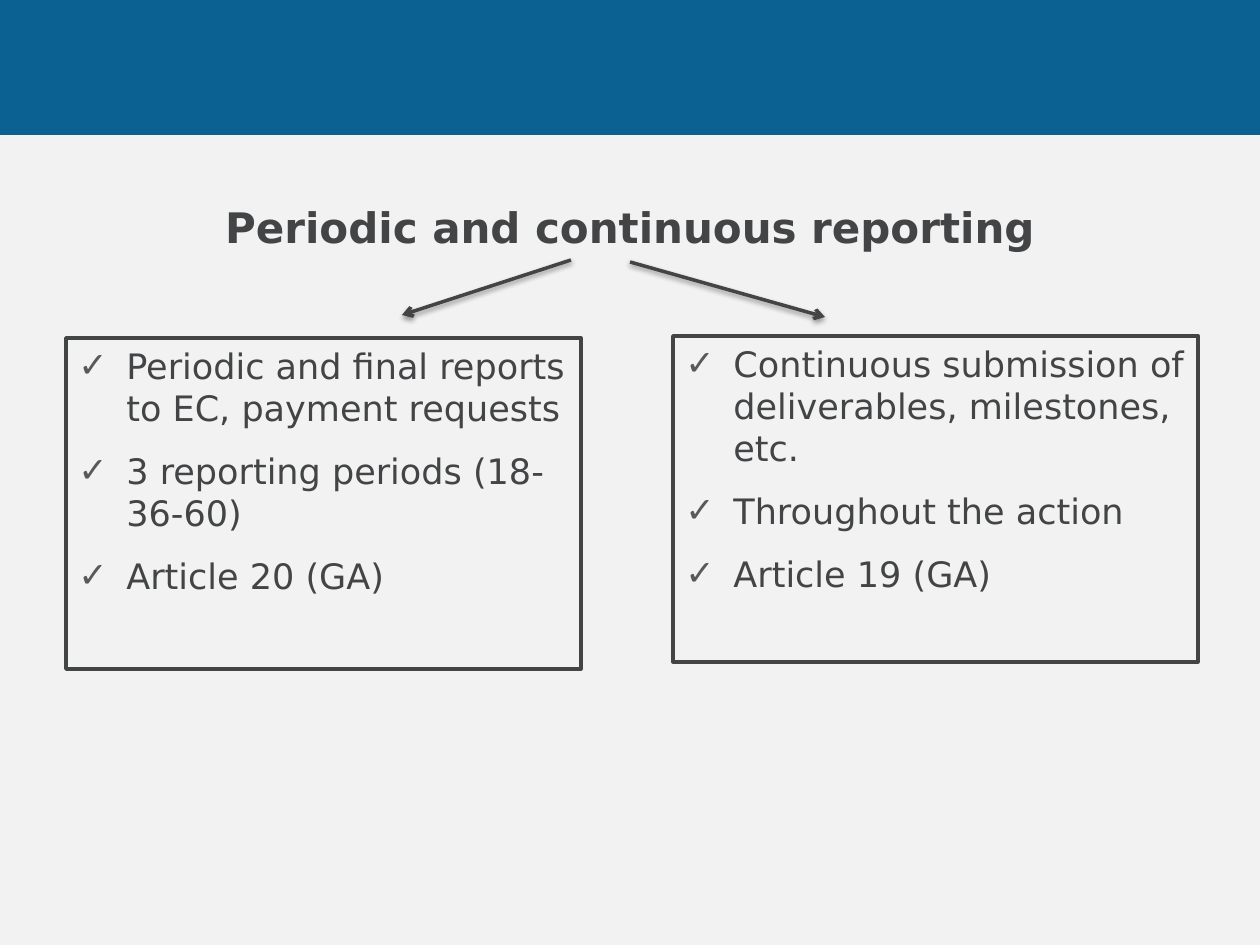
import pptx
import pptx.util
import pptx.dml.color
import pptx.enum.shapes
import pptx.enum.text
import pptx.oxml
import pptx.oxml.ns
from dataclasses import dataclass

TITLE = "Periodic and continuous reporting"
TITLE_AREA = (130, 195, 1000, 142)
BAND_AREA = (0, 0, 1260, 135)
COLUMNS = [
    {
        "area": (66, 338, 515, 331),
        "arrow": (571, 260, 402, 315),
        "points": [
            "Periodic and final reports to EC, payment requests",
            "3 reporting periods (18-36-60)",
            "Article 20 (GA)",
        ],
    },
    {
        "area": (673, 336, 525, 326),
        "arrow": (630, 262, 825, 317),
        "points": [
            "Continuous submission of deliverables, milestones, etc.",
            "Throughout the action",
            "Article 19 (GA)",
        ],
    },
]


@dataclass(frozen=True)
class Theme:
    font: str = "DejaVu Sans"
    background: str = "F2F2F2"
    band: str = "0B6192"
    text: str = "434445"
    outline: str = "434544"
    bullet: str = "595959"
    title_size: int = 24
    body_size: int = 20
    line_width: int = 2
    paragraph_gap: int = 6
    indent: int = 48


THEME = Theme()
SCALE = 914400 / 126


def emu(px):
    return round(px * SCALE)


def place(area):
    return [emu(length) for length in area]


def color(value):
    return pptx.dml.color.RGBColor.from_string(value)


def append_xml(parent, xml):
    head, tail = xml.split(" ", 1)
    namespace = pptx.oxml.ns.nsdecls("a")
    parent.append(pptx.oxml.parse_xml(f"{head} {namespace} {tail}"))


def style_line(line):
    line.color.rgb = color(THEME.outline)
    line.width = pptx.util.Pt(THEME.line_width)


def style_runs(para, size, bold=False):
    for span in para.runs:
        span.font.name = THEME.font
        span.font.size = pptx.util.Pt(size)
        span.font.bold = bold
        span.font.color.rgb = color(THEME.text)


def add_rectangle(page, area, fill):
    box = page.shapes.add_shape(
        pptx.enum.shapes.MSO_SHAPE.RECTANGLE, *place(area))
    box.shadow.inherit = False
    box.fill.solid()
    box.fill.fore_color.rgb = color(fill)
    return box


def add_band(page):
    band = add_rectangle(page, BAND_AREA, THEME.band)
    band.line.fill.background()


def format_title(page):
    title = page.shapes.title
    title.left, title.top, title.width, title.height = place(TITLE_AREA)
    frame = title.text_frame
    frame.text = TITLE
    frame.word_wrap = True
    frame.auto_size = pptx.enum.text.MSO_AUTO_SIZE.NONE
    frame.vertical_anchor = pptx.enum.text.MSO_ANCHOR.TOP
    para = frame.paragraphs[0]
    para.alignment = pptx.enum.text.PP_ALIGN.CENTER
    style_runs(para, THEME.title_size, bold=True)


def add_bullet(para):
    properties = para._p.get_or_add_pPr()
    properties.set("marL", str(emu(THEME.indent)))
    properties.set("indent", str(-emu(THEME.indent)))
    append_xml(properties, f'<a:buClr ><a:srgbClr val="{THEME.bullet}"/></a:buClr>')
    append_xml(properties, f'<a:buFont typeface="{THEME.font}"/>')
    append_xml(properties, '<a:buChar char="✓"/>')


def add_points(page, area, points):
    box = add_rectangle(page, area, THEME.background)
    style_line(box.line)
    frame = box.text_frame
    frame.word_wrap = True
    frame.vertical_anchor = pptx.enum.text.MSO_ANCHOR.TOP
    for index, point in enumerate(points):
        para = frame.add_paragraph() if index else frame.paragraphs[0]
        para.text = point
        add_bullet(para)
        para.alignment = pptx.enum.text.PP_ALIGN.LEFT
        para.space_before = pptx.util.Pt(THEME.paragraph_gap if index else 0)
        para.space_after = pptx.util.Pt(THEME.paragraph_gap)
        style_runs(para, THEME.body_size)


def add_arrow(page, ends):
    arrow = page.shapes.add_connector(
        pptx.enum.shapes.MSO_CONNECTOR.STRAIGHT, *place(ends))
    style_line(arrow.line)
    properties = arrow._element.spPr
    append_xml(properties.find(pptx.oxml.ns.qn("a:ln")), '<a:tailEnd type="arrow"/>')
    blur, distance = pptx.util.Pt(3.1), pptx.util.Pt(1.6)
    append_xml(properties, (
        f'<a:effectLst ><a:outerShdw blurRad="{blur}" dist="{distance}" '
        'dir="5400000" rotWithShape="0"><a:srgbClr val="000000">'
        '<a:alpha val="38000"/></a:srgbClr></a:outerShdw></a:effectLst>'))


def main():
    deck = pptx.Presentation()
    deck.slide_width, deck.slide_height = emu(1260), emu(945)
    page = deck.slides.add_slide(deck.slide_layouts.get_by_name("Title Only"))
    page.background.fill.solid()
    page.background.fill.fore_color.rgb = color(THEME.background)
    add_band(page)
    format_title(page)
    for column in COLUMNS:
        add_points(page, column["area"], column["points"])
    for column in COLUMNS:
        add_arrow(page, column["arrow"])
    deck.save("out.pptx")


if __name__ == "__main__":
    main()
